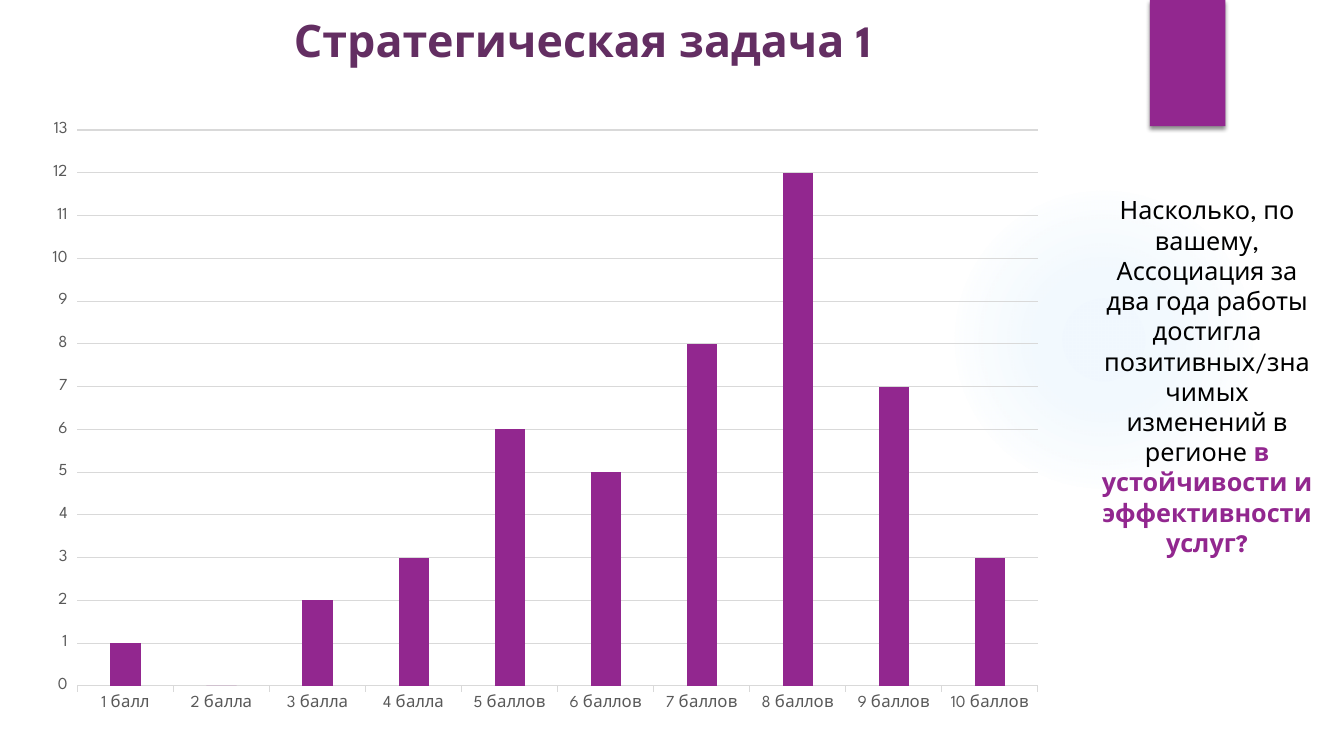
from pptx import Presentation, util as u
from pptx.chart.data import CategoryChartData
from pptx.dml.color import RGBColor
from pptx.enum import chart as charts, shapes, text
from pptx.oxml import parse_xml
from pptx.oxml.ns import nsdecls, qn

FONT = "League Spartan"
PURPLE, PLUM, BLACK = "92278F", "632E62", "000000"
GREY, PALE, SKY = "595959", "D9D9D9", "45A5ED"


def color(value):
    return RGBColor.from_string(value)


def box(left, top, width, height):
    return [u.Cm(length) for length in (left, top, width, height)]


class Board:
    """Holds the style and the current slide."""

    def __init__(self, presentation):
        self.slide = presentation.slides.add_slide(presentation.slide_layouts[5])

    def style(self, font, size, hex_color, bold=False):
        font.name, font.size, font.bold = FONT, u.Pt(size), bold
        font.color.rgb = color(hex_color)

    def add_runs(self, frame, size, runs):
        frame.word_wrap = True
        frame.vertical_anchor = text.MSO_ANCHOR.TOP
        paragraph = frame.paragraphs[0]
        paragraph.alignment = text.PP_ALIGN.CENTER
        for words, hex_color, bold in runs:
            run = paragraph.add_run()
            run.text = words
            self.style(run.font, size, hex_color, bold)

    def title(self, place, words):
        title = self.slide.shapes.title
        title.left, title.top, title.width, title.height = box(*place)
        title.text_frame.auto_size = text.MSO_AUTO_SIZE.NONE
        self.add_runs(title.text_frame, 32, [(words, PLUM, True)])

    def textbox(self, place, size, runs):
        shape = self.slide.shapes.add_textbox(*box(*place))
        self.add_runs(shape.text_frame, size, runs)

    def shape(self, kind, place):
        shape = self.slide.shapes.add_shape(kind, *box(*place))
        shape.shadow.inherit = False
        shape.line.fill.background()
        return shape

    def glow(self, place, hex_color, stops):
        shape = self.shape(shapes.MSO_SHAPE.OVAL, place)
        shape.fill.gradient()
        gradient = shape._element.spPr.find(qn("a:gradFill"))
        for child in list(gradient):
            gradient.remove(child)
        marks = "".join(
            f'<a:gs pos="{position * 1000}"><a:srgbClr val="{hex_color}">'
            f'<a:alpha val="{alpha * 1000}"/></a:srgbClr></a:gs>'
            for position, alpha in stops)
        gradient.append(parse_xml(f'<a:gsLst {nsdecls("a")}>{marks}</a:gsLst>'))
        gradient.append(parse_xml(
            f'<a:path {nsdecls("a")} path="circle">'
            '<a:fillToRect l="50000" t="50000" r="50000" b="50000"/></a:path>'))

    def ribbon(self, place, hex_color):
        shape = self.shape(shapes.MSO_SHAPE.RECTANGLE, place)
        shape.fill.solid()
        shape.fill.fore_color.rgb = color(hex_color)
        shape._element.spPr.find(qn("a:effectLst")).append(parse_xml(
            f'<a:outerShdw {nsdecls("a")} blurRad="{u.Pt(3)}" dist="{u.Pt(2)}" '
            'dir="5400000" rotWithShape="0"><a:srgbClr val="000000">'
            '<a:alpha val="45000"/></a:srgbClr></a:outerShdw>'))

    def rule(self, line):
        line.color.rgb = color(PALE)
        line.width = u.Pt(0.75)

    def columns(self, place, categories, values, top_value):
        data = CategoryChartData()
        data.categories = categories
        data.add_series("Series 1", values)
        chart = self.slide.shapes.add_chart(
            charts.XL_CHART_TYPE.COLUMN_CLUSTERED, *box(*place), data).chart
        self.style(chart.font, 10, BLACK)
        chart.has_legend = chart.has_title = False

        plot = chart.plots[0]
        plot.gap_width, plot.overlap = 219, -27
        plot.vary_by_categories = False
        fill = plot.series[0].format.fill
        fill.solid()
        fill.fore_color.rgb = color(PURPLE)

        for axis in (chart.category_axis, chart.value_axis):
            self.style(axis.tick_labels.font, 12, GREY)
            axis.major_tick_mark = charts.XL_TICK_MARK.OUTSIDE
            axis.minor_tick_mark = charts.XL_TICK_MARK.NONE
        self.rule(chart.category_axis.format.line)
        scale = chart.value_axis
        scale.minimum_scale, scale.maximum_scale = 0, top_value
        scale.major_unit = 1
        scale.format.line.fill.background()
        self.rule(scale.major_gridlines.format.line)


def main():
    presentation = Presentation()
    presentation.slide_width, presentation.slide_height = u.Cm(33.87), u.Cm(19.05)
    board = Board(presentation)

    # Backdrop
    board.glow((23.9, 4.65, 7.82, 7.82), SKY, [(0, 7), (36, 6), (69, 0)])
    board.ribbon((28.98, 0, 1.9, 3.18), PURPLE)

    # Heading
    board.title((-0.66, 0.2, 30.68, 2.51), "Стратегическая задача 1")

    # Scores
    endings = ["балл"] + ["балла"] * 3 + ["баллов"] * 6
    categories = [f"{score} {word}" for score, word in enumerate(endings, 1)]
    board.columns((0.81, 2.77, 25.86, 15.47), categories,
                  [1, 0, 2, 3, 6, 5, 8, 12, 7, 3], 13)

    # Question
    board.textbox((27.46, 4.78, 5.92, 9.5), 18, [
        ("Насколько, по вашему, Ассоциация за два года работы достигла "
         "позитивных/значимых изменений в регионе ", BLACK, False),
        ("в устойчивости и эффективности услуг?", PURPLE, True)])

    presentation.save("out.pptx")


if __name__ == "__main__":
    main()
